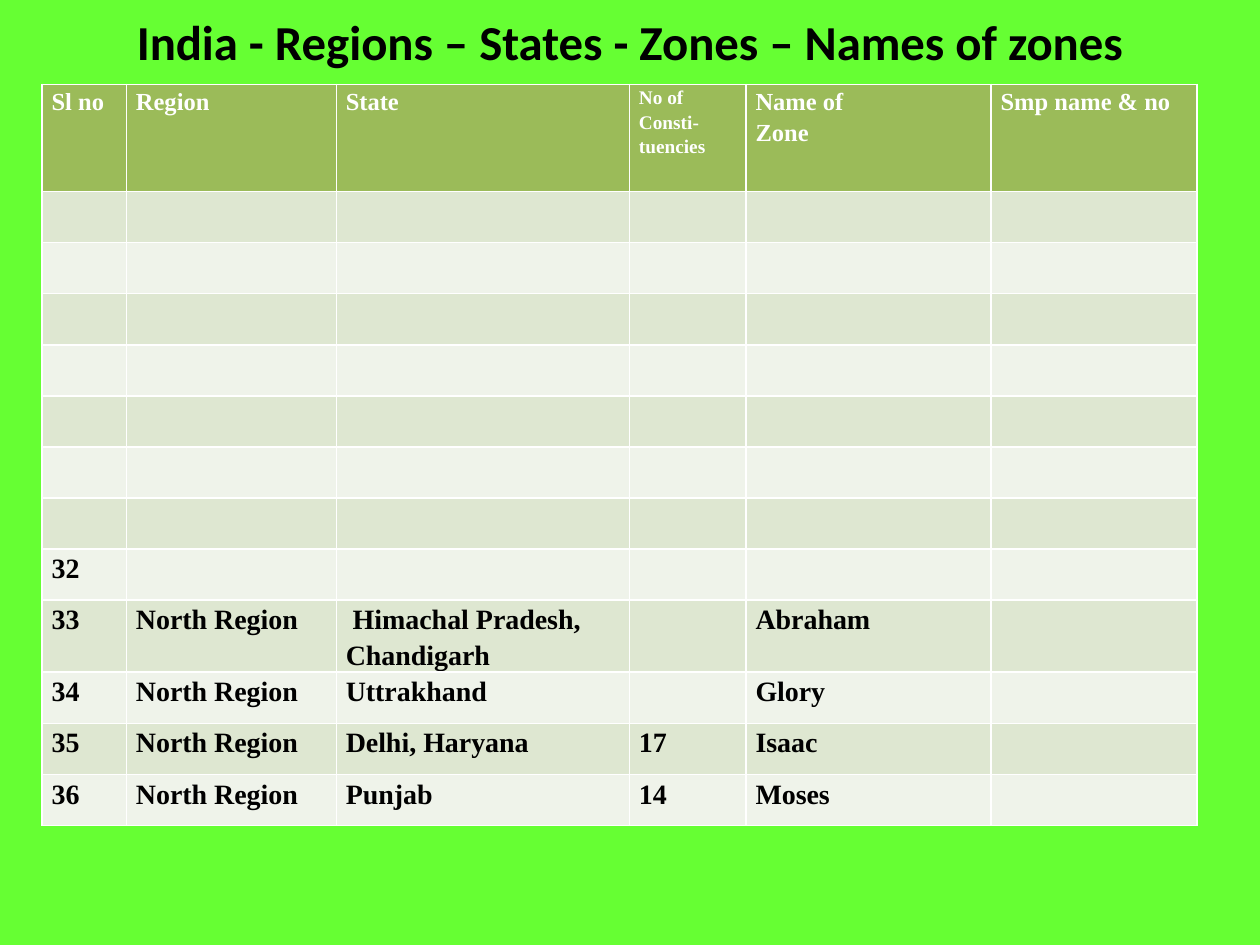
"""Build the slide that lists India's regions, states and zones."""
from pptx import Presentation
from pptx.dml.color import RGBColor as RGB
from pptx.enum.text import MSO_ANCHOR as Anchor, PP_ALIGN as Align
from pptx.util import Cm, Pt


def paint(fill, color):
    """Fill with one solid hex colour."""
    fill.solid()
    fill.fore_color.rgb = RGB.from_string(color)


def write(para, text, size, color, face):
    """Add one bold run to a paragraph."""
    run = para.add_run()
    run.text = text
    font = run.font
    font.name, font.size, font.bold = face, Pt(size), True
    paint(font.fill, color)


deck = Presentation()
deck.slide_width, deck.slide_height = Cm(25.4), Cm(19.05)
slide = deck.slides.add_slide(deck.slide_layouts[5])
paint(slide.background.fill, "66FF33")

title = slide.shapes.title
title.left, title.top, title.width, title.height = Cm(1.27), Cm(0), Cm(22.86), Cm(3.18)
frame = title.text_frame
frame.word_wrap = True
frame.vertical_anchor = Anchor.MIDDLE
frame.margin_bottom = Cm(1.65)
para = frame.paragraphs[0]
para.alignment = Align.CENTER
write(para, "India - Regions – States - Zones – Names of zones", 27.9, "000000", "Calibri")

north = "North Region"
head = ["Sl no", "Region", "State", "No of Consti-tuencies", "Name of\nZone", "Smp name & no"]
body = [
    ["32", "", "", "", "", ""],
    ["33", north, " Himachal Pradesh, Chandigarh", "", "Abraham", ""],
    ["34", north, "Uttrakhand", "", "Glory", ""],
    ["35", north, "Delhi, Haryana", "17", "Isaac", ""],
    ["36", north, "Punjab", "14", "Moses", ""],
]
rows = [head] + [[""] * 6] * 7 + body
wide = [1.7, 4.23, 5.91, 2.35, 4.94, 4.15]
high = [2.16] + [1.03] * 8 + [1.45] + [1.03] * 3

grid = slide.shapes.add_table(
    len(rows), len(wide), Cm(0.85), Cm(1.7), Cm(sum(wide)), Cm(sum(high))
).table
for col, width in zip(grid.columns, wide):
    col.width = Cm(width)

for i, row in enumerate(rows):
    grid.rows[i].height = Cm(high[i])
    back = "9BBB59" if i == 0 else "DEE7D1" if i % 2 else "EFF3EA"
    ink = "000000" if i else "FFFFFF"
    for j, text in enumerate(row):
        cell = grid.cell(i, j)
        paint(cell.fill, back)
        if not text:
            continue
        cell.margin_left = cell.margin_right = Cm(0.19)
        cell.margin_top = cell.margin_bottom = Cm(0)
        size = 16 if i else 11 if j == 3 else 14
        for k, line in enumerate(text.split("\n")):
            para = cell.text_frame.add_paragraph() if k else cell.text_frame.paragraphs[0]
            para.line_spacing = 1.15
            write(para, line, size, ink, "Times New Roman")

deck.save("out.pptx")
